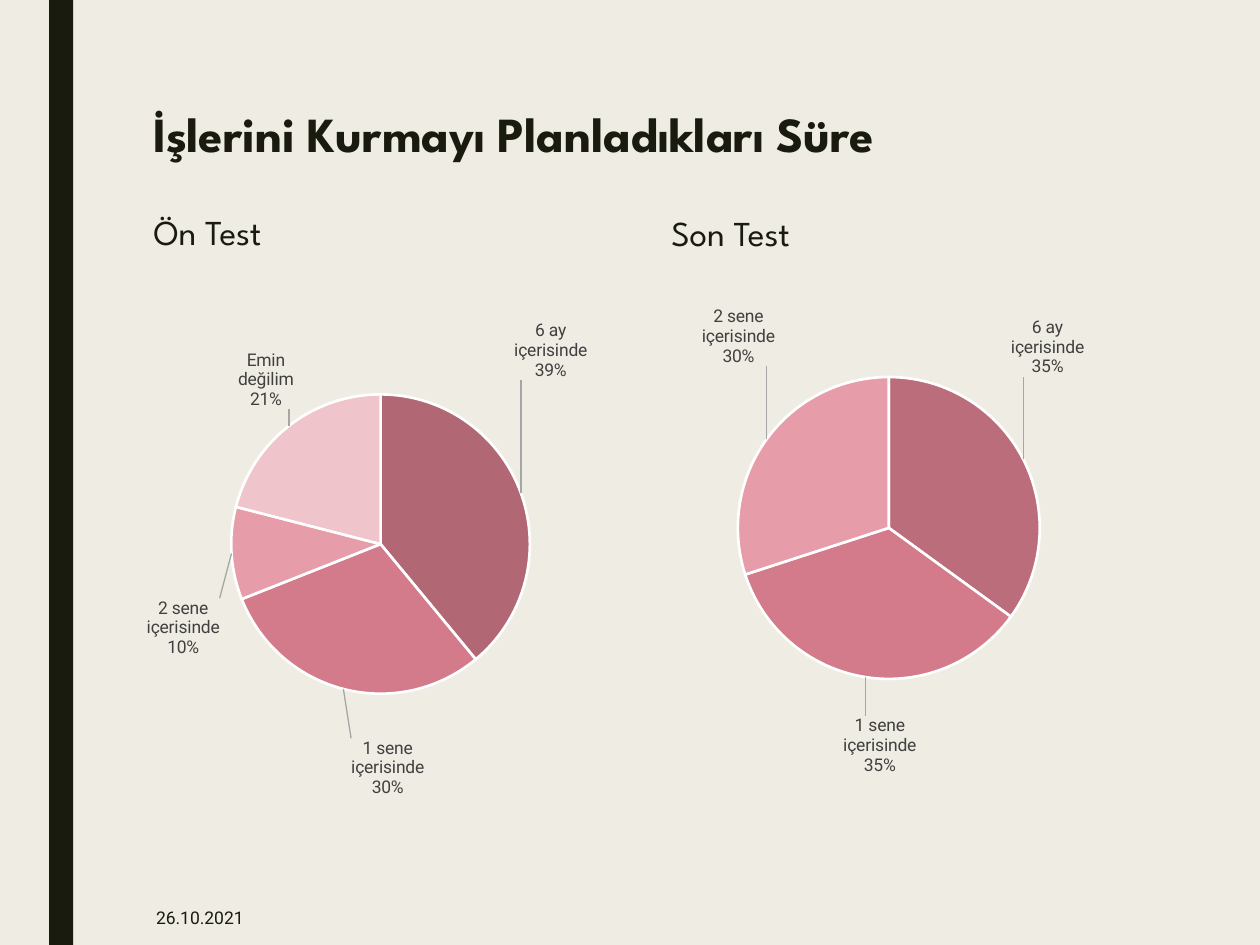
"""Build a slide with two pie charts of planned business start times."""
from pptx import Presentation
from pptx.chart.data import CategoryChartData
from pptx.dml.color import RGBColor
from pptx.enum.chart import XL_CHART_TYPE
from pptx.enum.shapes import MSO_SHAPE
from pptx.enum.text import MSO_ANCHOR, PP_ALIGN
from pptx.oxml import parse_xml
from pptx.oxml.ns import nsdecls, qn
from pptx.util import Inches, Pt

CREAM = RGBColor(0xEF, 0xED, 0xE3)
INK = RGBColor(0x19, 0x1B, 0x0E)
BLACK = RGBColor(0, 0, 0)
WHITE = RGBColor(0xFF, 0xFF, 0xFF)
GRAY = RGBColor(0x40, 0x40, 0x40)
LEADER = RGBColor(0xA6, 0xA6, 0xA6)
PRE_COLORS = [RGBColor(0xB2, 0x67, 0x75), RGBColor(0xD4, 0x7B, 0x8B),
              RGBColor(0xE6, 0x9D, 0xA9), RGBColor(0xEF, 0xC4, 0xCA)]
POST_COLORS = [RGBColor(0xBB, 0x6D, 0x7B), RGBColor(0xD3, 0x7B, 0x8A),
               RGBColor(0xE7, 0x9D, 0xA9)]
CATEGORIES = ["6 ay içerisinde", "1 sene içerisinde", "2 sene içerisinde", "Emin değilim"]

LABEL_FORMAT = f"""<c:numFmt formatCode="0%" sourceLinked="0"/>
<c:spPr><a:noFill/><a:ln><a:noFill/></a:ln></c:spPr>
<c:txPr><a:bodyPr/><a:p><a:pPr><a:defRPr sz="1000"><a:solidFill><a:srgbClr val="{GRAY}"/></a:solidFill>
<a:latin typeface="Roboto"/></a:defRPr></a:pPr></a:p></c:txPr>
<c:dLblPos val="bestFit"/><c:showLegendKey val="0"/><c:showVal val="0"/><c:showCatName val="1"/>
<c:showSerName val="0"/><c:showPercent val="1"/><c:showBubbleSize val="0"/><c:separator>\n</c:separator>"""


def write_text(shape, text, size, font_name, spacing, anchor, bold=False):
    frame = shape.text_frame
    frame.word_wrap = True
    frame.vertical_anchor = anchor
    paragraph = frame.paragraphs[0]
    paragraph.text = text
    paragraph.alignment = PP_ALIGN.LEFT
    paragraph.line_spacing = spacing
    font = paragraph.runs[0].font
    for name, value in {"size": Pt(size), "name": font_name, "bold": bold}.items():
        setattr(font, name, value)
    font.color.rgb = INK


def layout_xml(settings):
    items = "".join(f'<c:{name} val="{value}"/>' for name, value in settings.items())
    return f'<c:layout {nsdecls("c")}><c:manualLayout>{items}</c:manualLayout></c:layout>'


presentation = Presentation()
presentation.slide_width = Inches(10)
presentation.slide_height = Inches(7.5)
slide = presentation.slides.add_slide(presentation.slide_layouts[5])
slide.background.fill.solid()
slide.background.fill.fore_color.rgb = CREAM

bar = slide.shapes.add_shape(MSO_SHAPE.RECTANGLE, Inches(0.39), 0, Inches(0.19), Inches(7.5))
bar.shadow.inherit = False
bar.fill.solid()
bar.fill.fore_color.rgb = INK
bar.line.fill.background()

title = slide.shapes.title
for name, value in {"left": 1.12, "top": 0.75, "width": 7.88, "height": 0.67}.items():
    setattr(title, name, Inches(value))
write_text(title, "İşlerini Kurmayı Planladıkları Süre", 28, "League Spartan", 0.89,
           MSO_ANCHOR.MIDDLE, True)

TEXTS = [
    ("Ön Test", (1.12, 1.6, 3.65, 0.45), 20, "League Spartan", 0.84, MSO_ANCHOR.BOTTOM),
    ("Son Test", (5.23, 1.61, 3.77, 0.45), 20, "League Spartan", 0.84, MSO_ANCHOR.BOTTOM),
    ("26.10.2021", (1.14, 7.06, 0.99, 0.44), 10, "Roboto", 1.0, MSO_ANCHOR.MIDDLE),
]
for text, box, *style in TEXTS:
    write_text(slide.shapes.add_textbox(*map(Inches, box)), text, *style)

PIES = [
    ((1.12, 2.23, 3.65, 4.19), (0.14, 0.215, 0.764, 0.567), [39, 30, 10, 21], PRE_COLORS,
     [(-0.03, -0.21), (0.18, 0.08), (-0.01, 0.14), (0.02, -0.02)]),
    ((5.23, 2.05, 3.77, 4.19), (0.166, 0.225, 0.636, 0.572), [35, 35, 30], POST_COLORS,
     [(-0.04, -0.15), (0.11, 0.06), (0.03, -0.13)]),
]
for box, plot_box, values, colors, label_offsets in PIES:
    chart_data = CategoryChartData()
    chart_data.categories = CATEGORIES[:len(values)]
    chart_data.add_series("Series 1", values)
    chart = slide.shapes.add_chart(XL_CHART_TYPE.PIE, *map(Inches, box), chart_data).chart
    chart.has_legend = False
    chart.has_title = False
    for name, value in {"size": Pt(10), "name": "Roboto"}.items():
        setattr(chart.font, name, value)
    chart.font.color.rgb = BLACK
    plot = chart.plots[0]
    plot.vary_by_categories = True
    series = plot.series[0]
    for index, color in enumerate(colors):
        point_format = series.points[index].format
        point_format.fill.solid()
        point_format.fill.fore_color.rgb = color
        point_format.line.color.rgb = WHITE
        point_format.line.width = Pt(1.5)

    labels = "".join(
        f'<c:dLbl><c:idx val="{index}"/>{layout_xml({"x": x, "y": y})}{LABEL_FORMAT}</c:dLbl>'
        for index, (x, y) in enumerate(label_offsets))
    series_element = series._element
    series_element.find(qn("c:cat")).addprevious(parse_xml(
        f'<c:dLbls {nsdecls("c", "a")}>{labels}{LABEL_FORMAT}<c:showLeaderLines val="1"/>'
        f'<c:leaderLines><c:spPr><a:ln w="9525"><a:solidFill><a:srgbClr val="{LEADER}"/>'
        '</a:solidFill></a:ln></c:spPr></c:leaderLines></c:dLbls>'))

    plot_area = chart._chartSpace.chart.plotArea
    for old_layout in plot_area.findall(qn("c:layout")):
        plot_area.remove(old_layout)
    settings = {"layoutTarget": "inner", "xMode": "edge", "yMode": "edge"}
    plot_area.insert(0, parse_xml(layout_xml(settings | dict(zip("xywh", plot_box)))))

presentation.save("out.pptx")
